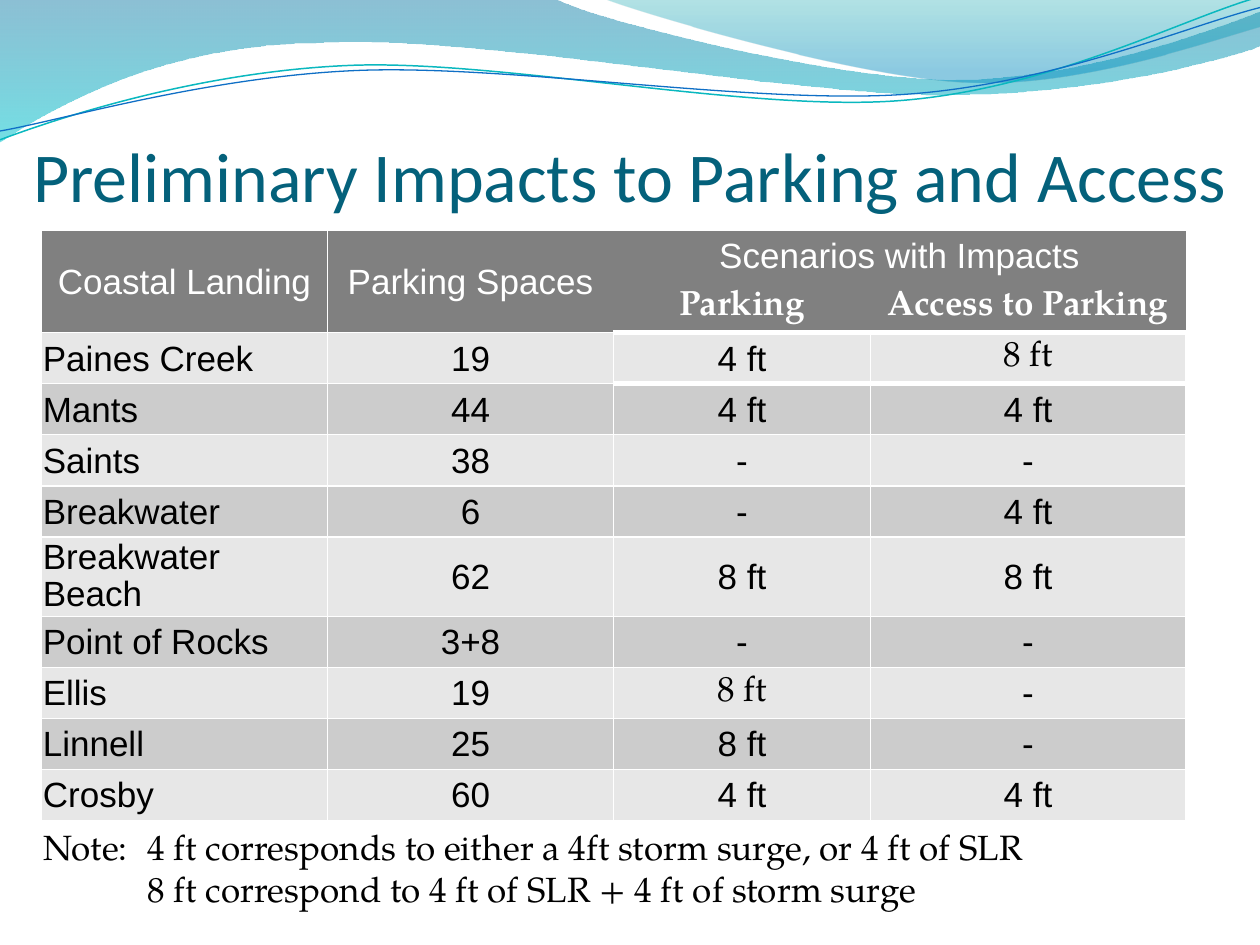
from lxml import etree
from pptx import Presentation
from pptx.dml.color import RGBColor
from pptx.enum.text import MSO_ANCHOR, PP_ALIGN
from pptx.oxml.ns import qn
from pptx.util import Inches, Pt

CENTER, LEFT = PP_ALIGN.CENTER, PP_ALIGN.LEFT
MIDDLE, BOTTOM = MSO_ANCHOR.MIDDLE, MSO_ANCHOR.BOTTOM
SANS, SERIF, TITLE_FONT = "Arial", "TeX Gyre Pagella", "Calibri"
COLORS = {
    "title": "04617B", "text": "000000", "white": "FFFFFF",
    "header": "808080", "light": "E7E7E7", "dark": "CCCCCC",
    "deep_blue": "0074A1", "turquoise": "00C6CF",
    "teal": "00A1A9", "sky": "008BBF",
    "teal_line": "0AB8BF", "blue_line": "0F6FC6",
}
WIDE_WAVE = [
    (0, -0.01), [(4.4, -0.01)],
    [(4.76, 0.17), (6.64, 0.63), (7.58, 0.63)],
    [(8.53, 0.63), (9.58, 0.26), (10, 0.09)], [(10.01, 0.36)],
    [(9.83, 0.44), (8.7, 0.76), (7.46, 0.75)],
    [(6.22, 0.75), (3.82, 0.28), (2.57, 0.34)],
    [(1.29, 0.35), (0.46, 0.83), (-0.01, 1.13)], [(0, -0.01)],
]
CORNER_WAVE = [
    (4.79, -0.01), [(5.09, 0.11), (6.82, 0.62), (7.69, 0.65)],
    [(8.56, 0.69), (9.61, 0.32), (10, 0.21)], [(10, 0)], [(4.79, -0.01)],
]
TEAL_CURVE = [
    (0, 1.11), [(0.48, 0.93), (1.58, 0.57), (2.77, 0.52)],
    [(3.95, 0.47), (5.93, 0.89), (7.13, 0.8)],
    [(8.33, 0.71), (9.38, 0.15), (9.98, -0.02)],
]
BLUE_CURVE = [
    (0, 1.04), [(0.47, 0.96), (1.64, 0.61), (2.83, 0.56)],
    [(4.03, 0.51), (5.97, 0.83), (7.17, 0.75)],
    [(8.36, 0.67), (9.41, 0.21), (10, 0.06)],
]
LANDINGS = [
    ("Paines Creek", "19", "4 ft", "8 ft"),
    ("Mants", "44", "4 ft", "4 ft"),
    ("Saints", "38", "-", "-"),
    ("Breakwater", "6", "-", "4 ft"),
    ("Breakwater Beach", "62", "8 ft", "8 ft"),
    ("Point of Rocks", "3+8", "-", "-"),
    ("Ellis", "19", "8 ft", "-"),
    ("Linnell", "25", "8 ft", "-"),
    ("Crosby", "60", "4 ft", "4 ft"),
]
SERIF_CELLS = {(2, 3), (8, 2)}
NOTES = [
    "Note: \t4 ft corresponds to either a 4ft storm surge, or 4 ft of SLR",
    "\t8 ft correspond to 4 ft of SLR + 4 ft of storm surge",
]


def rgb(name):
    """Return the named palette colour."""
    return RGBColor.from_string(COLORS[name])


def style(paragraph, font_name, size, color, align=LEFT, bold=False):
    """Format a paragraph and its runs."""
    paragraph.alignment = align
    for run in paragraph.runs:
        font = run.font
        font.name, font.size, font.bold = font_name, Pt(size), bold
        font.color.rgb = rgb(color)


def add_outline(slide, outline, close):
    """Add a shadowless freeform of straight and cubic segments."""
    start, *segments = outline
    builder = slide.shapes.build_freeform(Inches(start[0]), Inches(start[1]))
    points = [(Inches(x), Inches(y)) for segment in segments for x, y in segment]
    builder.add_line_segments(points, close=close)
    shape = builder.convert_to_shape()
    shape.shadow.inherit = False
    lines = iter(list(shape._element.spPr.iter(qn("a:lnTo"))))
    for segment in segments:
        group = [next(lines) for _ in segment]
        if len(group) == 3:
            curve = etree.Element(qn("a:cubicBezTo"))
            group[0].addprevious(curve)
            for line in group:
                curve.append(line[0])
                line.getparent().remove(line)
    return shape


def add_wave(slide, outline, stops):
    """Add a wave with a translucent downward gradient."""
    shape = add_outline(slide, outline, True)
    shape.line.fill.background()
    shape.fill.gradient()
    shape.fill.gradient_angle = 270
    for stop, (position, color, _) in zip(shape.fill.gradient_stops, stops):
        stop.position = position
        stop.color.rgb = rgb(color)
    stop_colors = shape._element.spPr.iter(qn("a:srgbClr"))
    for stop_color, (_, _, opacity) in zip(stop_colors, stops):
        etree.SubElement(stop_color, qn("a:alpha"), val=str(opacity * 1000))


def add_curve(slide, outline, color, width):
    """Add an open curved line."""
    shape = add_outline(slide, outline, False)
    shape.fill.background()
    shape.line.color.rgb = rgb(color)
    shape.line.width = Pt(width)


def add_banner(slide):
    """Add the waves and curves along the top edge."""
    add_wave(slide, WIDE_WAVE, [(0, "deep_blue", 45), (1, "turquoise", 55)])
    add_wave(slide, CORNER_WAVE, [(0, "teal", 30), (0.8, "sky", 45)])
    add_curve(slide, TEAL_CURVE, "teal_line", 0.85)
    add_curve(slide, BLUE_CURVE, "blue_line", 0.75)


def add_title(slide, left, top, width, height):
    """Add the slide title."""
    frame = slide.shapes.add_textbox(left, top, width, height).text_frame
    frame.word_wrap = True
    frame.vertical_anchor = BOTTOM
    frame.margin_left = frame.margin_right = frame.margin_bottom = 0
    frame.text = "Preliminary Impacts to Parking and Access"
    style(frame.paragraphs[0], TITLE_FONT, 40, "title", CENTER)


def set_borders(cell, widths):
    """Set white borders in points by side; zero hides a side."""
    properties = cell._tc.get_or_add_tcPr()
    for side in "LRTB":
        width = widths.get(side, 0)
        line = etree.SubElement(properties, qn(f"a:ln{side}"), w=str(Pt(width)))
        if width:
            fill = etree.SubElement(line, qn("a:solidFill"))
            etree.SubElement(fill, qn("a:srgbClr"), val=COLORS["white"])
        else:
            etree.SubElement(line, qn("a:noFill"))


def fill_cell(cell, text, fill, borders, font_name, color, align, bold=False):
    """Write and format one table cell."""
    set_borders(cell, borders)
    cell.fill.solid()
    cell.fill.fore_color.rgb = rgb(fill)
    cell.vertical_anchor = MIDDLE
    cell.margin_left = cell.margin_right = cell.margin_top = Inches(0.01)
    cell.margin_bottom = 0
    cell.text = text
    style(cell.text_frame.paragraphs[0], font_name, 20, color, align, bold)


def add_impact_table(slide, left, top, width, height):
    """Add the table of impacts by coastal landing."""
    table = slide.shapes.add_table(len(LANDINGS) + 2, 4, left, top, width, height).table
    for column, column_width in zip(table.columns, (2.27, 2.27, 2.04, 2.5)):
        column.width = Inches(column_width)
    thin = dict.fromkeys("LRTB", 1)
    header_cells = [
        (0, 0, "Coastal Landing", thin), (1, 0, "", thin),
        (0, 1, "Parking Spaces", {"L": 1, "T": 1, "B": 1}), (1, 1, "", {"L": 1, "B": 1}),
        (0, 2, "Scenarios with Impacts", {}), (0, 3, "", {}),
        (1, 2, "Parking", {"B": 3}), (1, 3, "Access to Parking", {"B": 3}),
    ]
    for row, column, text, borders in header_cells:
        scenario = row == 1 and column > 1
        fill_cell(table.cell(row, column), text, "header", borders,
                  SERIF if scenario else SANS, "white", CENTER, scenario)
    for first, last in (((0, 0), (1, 0)), ((0, 1), (1, 1)), ((0, 2), (0, 3))):
        table.cell(*first).merge(table.cell(*last))
    for row, landing in enumerate(LANDINGS, 2):
        for column, text in enumerate(landing):
            borders = {**thin, "T": 3 if column > 1 and row < 4 else 1,
                       "B": 3 if column > 1 and row == 2 else 1}
            fill_cell(table.cell(row, column), text, "dark" if row % 2 else "light",
                      borders, SERIF if (row, column) in SERIF_CELLS else SANS,
                      "text", CENTER if column else LEFT)
    table.cell(6, 0).text_frame.paragraphs[0].line_spacing = 0.93


def add_notes(slide, left, top, width, height):
    """Add the tabbed notes below the table."""
    frame = slide.shapes.add_textbox(left, top, width, height).text_frame
    frame.word_wrap = True
    for index, note in enumerate(NOTES):
        paragraph = frame.add_paragraph() if index else frame.paragraphs[0]
        paragraph.text = note
        tabs = etree.SubElement(paragraph._p.get_or_add_pPr(), qn("a:tabLst"))
        etree.SubElement(tabs, qn("a:tab"), pos=str(Inches(0.82)), algn="l")
        style(paragraph, SERIF, 20, "text")


def main():
    """Build and save the slide."""
    presentation = Presentation()
    presentation.slide_width, presentation.slide_height = Inches(10), Inches(7.5)
    slide = presentation.slides.add_slide(presentation.slide_layouts[6])
    add_banner(slide)
    add_title(slide, 0, Inches(1), Inches(10), Inches(0.72))
    add_impact_table(slide, Inches(0.33), Inches(1.83), Inches(9.08), Inches(4.46))
    add_notes(slide, Inches(0.25), Inches(6.5), Inches(8.75), Inches(0.77))
    presentation.save("out.pptx")


if __name__ == "__main__":
    main()
